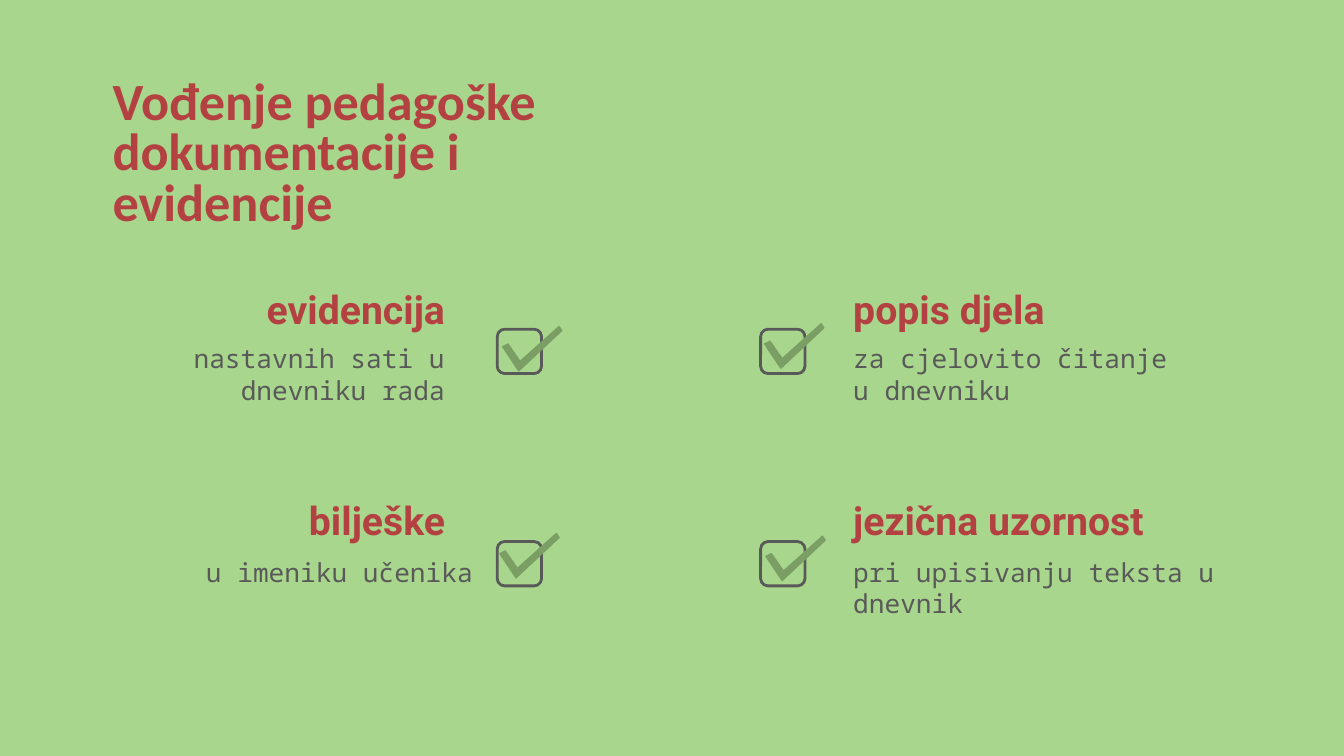
from dataclasses import dataclass

from pptx import Presentation
from pptx.dml.color import RGBColor
from pptx.enum import shapes, text
from pptx.slide import Slide
from pptx.util import Inches, Pt


@dataclass(frozen=True)
class Theme:
    background: str = "A8D68C"
    heading: str = "B44141"
    body: str = "595959"
    check: str = "7A9E64"
    title_font: str = "Calibri"
    heading_font: str = "Roboto"
    body_font: str = "Noto Sans Mono"
    title_size: float = 28
    heading_size: float = 21
    body_size: float = 14


@dataclass(frozen=True)
class Box:
    left: float
    top: float
    width: float
    height: float


@dataclass(frozen=True)
class Item:
    heading: str
    body: str
    heading_box: Box
    body_box: Box
    checkbox: Box
    check_at: tuple[float, float]
    align: text.PP_ALIGN


THEME = Theme()
SLIDE_WIDTH = 10
SLIDE_HEIGHT = SLIDE_WIDTH * 9 / 16
LEFT, RIGHT = text.PP_ALIGN.LEFT, text.PP_ALIGN.RIGHT
SIDE = 0.33  # checkbox side
CHECK_OUTLINE = [(0.42, 0), (0.13, 0.26), (0.04, 0.13), (0, 0.15),
                 (0.12, 0.33), (0.44, 0.03)]

ITEMS = [
    Item("evidencija", "nastavnih sati u dnevniku rada",
         Box(0.72, 2.04, 2.69, 0.53), Box(0.72, 2.45, 2.69, 0.78),
         Box(3.7, 2.45, SIDE, SIDE), (3.74, 2.43), RIGHT),
    Item("popis djela", "za cjelovito čitanje u dnevniku",
         Box(6.25, 2.04, 2.69, 0.53), Box(6.25, 2.45, 2.69, 0.78),
         Box(5.66, 2.45, SIDE, SIDE), (5.69, 2.41), LEFT),
    Item("bilješke", "u imeniku učenika",
         Box(0.57, 3.61, 2.84, 0.53), Box(0.29, 4.04, 3.33, 0.78),
         Box(3.7, 4.03, SIDE, SIDE), (3.72, 3.97), RIGHT),
    Item("jezična uzornost", "pri upisivanju teksta u dnevnik",
         Box(6.25, 3.61, 2.69, 0.53), Box(6.25, 4.04, 2.89, 0.78),
         Box(5.66, 4.03, SIDE, SIDE), (5.7, 3.99), LEFT),
]


def emu(box: Box) -> list[int]:
    return [Inches(v) for v in (box.left, box.top, box.width, box.height)]


def add_text(slide: Slide, words: str, box: Box, *, font: str, size: float,
             color: str, bold: bool = False, align: text.PP_ALIGN = LEFT,
             anchor: text.MSO_ANCHOR = text.MSO_ANCHOR.TOP,
             line_spacing: float = 1.0) -> None:
    frame = slide.shapes.add_textbox(*emu(box)).text_frame
    frame.word_wrap = True
    frame.vertical_anchor = anchor
    frame.margin_left = frame.margin_right = Inches(0.1)
    frame.margin_top = frame.margin_bottom = Inches(0.1)
    paragraph = frame.paragraphs[0]
    paragraph.alignment = align
    paragraph.line_spacing = line_spacing
    run = paragraph.add_run()
    run.text = words
    run.font.name = font
    run.font.size = Pt(size)
    run.font.bold = bold
    run.font.color.rgb = RGBColor.from_string(color)


def add_checkbox(slide: Slide, box: Box) -> None:
    shape = slide.shapes.add_shape(shapes.MSO_SHAPE.ROUNDED_RECTANGLE, *emu(box))
    shape.shadow.inherit = False
    shape.fill.background()
    shape.line.color.rgb = RGBColor.from_string(THEME.body)
    shape.line.width = Pt(1.5)


def add_check(slide: Slide, left: float, top: float) -> None:
    points = [(Inches(left + x), Inches(top + y)) for x, y in CHECK_OUTLINE]
    builder = slide.shapes.build_freeform(*points[0])
    builder.add_line_segments(points[1:], close=True)
    shape = builder.convert_to_shape()
    shape.shadow.inherit = False
    shape.fill.solid()
    shape.fill.fore_color.rgb = RGBColor.from_string(THEME.check)
    shape.line.color.rgb = RGBColor.from_string(THEME.check)
    shape.line.width = Pt(0.75)


def add_item(slide: Slide, item: Item) -> None:
    add_checkbox(slide, item.checkbox)
    add_check(slide, *item.check_at)
    add_text(slide, item.heading, item.heading_box, font=THEME.heading_font,
             size=THEME.heading_size, color=THEME.heading, bold=True,
             align=item.align, anchor=text.MSO_ANCHOR.BOTTOM)
    add_text(slide, item.body, item.body_box, font=THEME.body_font,
             size=THEME.body_size, color=THEME.body, align=item.align)


def main() -> None:
    presentation = Presentation()
    presentation.slide_width = Inches(SLIDE_WIDTH)
    presentation.slide_height = Inches(SLIDE_HEIGHT)
    slide = presentation.slides.add_slide(presentation.slide_layouts[6])

    # Background
    slide.background.fill.solid()
    slide.background.fill.fore_color.rgb = RGBColor.from_string(THEME.background)

    # Title
    add_text(slide, "Vođenje pedagoške dokumentacije i evidencije",
             Box(0.74, 0.5, 3.83, 0.63), font=THEME.title_font,
             size=THEME.title_size, color=THEME.heading, bold=True,
             line_spacing=0.8)

    # Checklist
    for item in ITEMS:
        add_item(slide, item)

    presentation.save("out.pptx")


if __name__ == "__main__":
    main()
